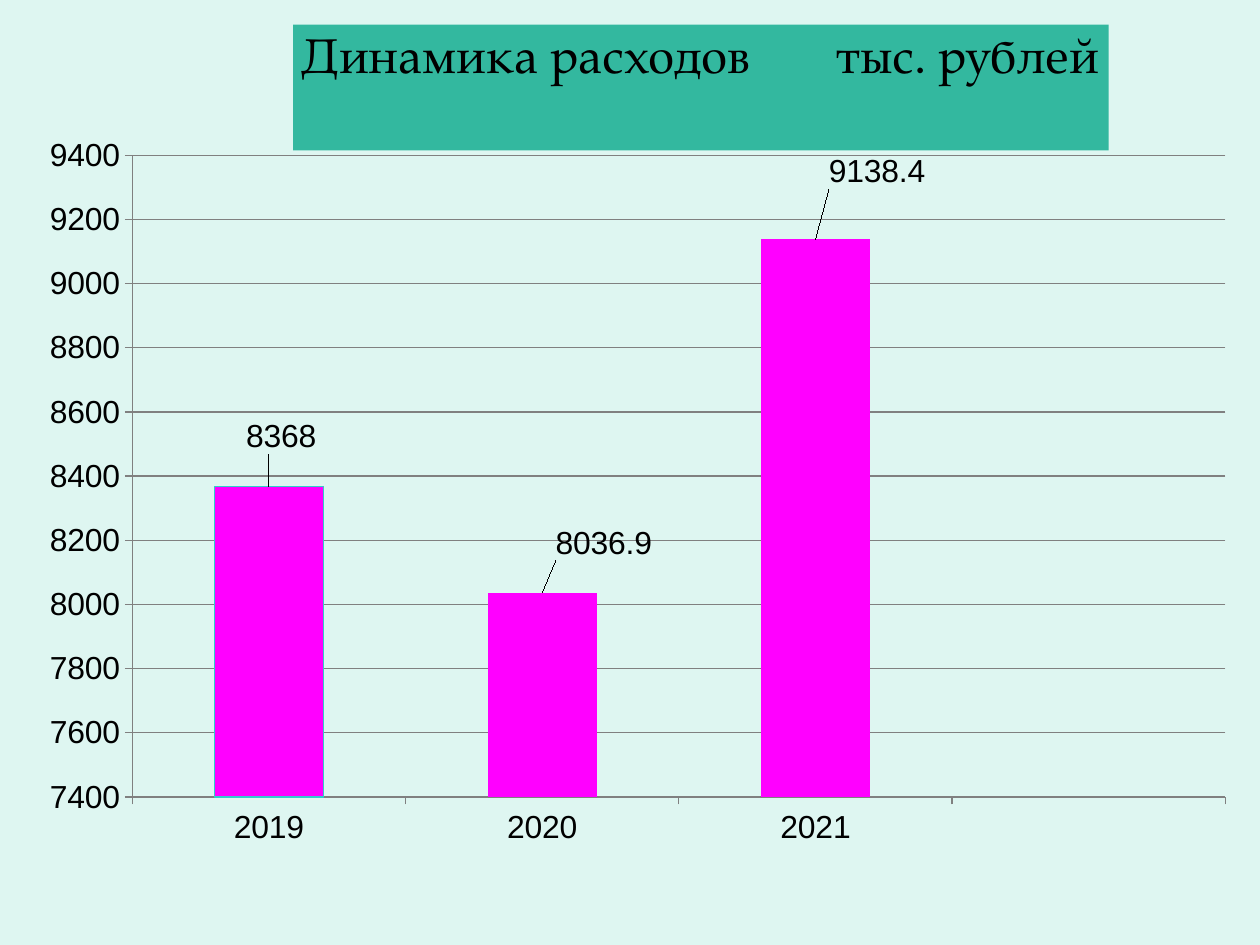
from lxml import etree
from pptx import Presentation
from pptx.chart.data import CategoryChartData
from pptx.dml.color import RGBColor
from pptx.enum import chart as charts, text
from pptx.oxml import parse_xml
from pptx.oxml.ns import nsdecls, qn
from pptx.util import Pt

BACKGROUND = RGBColor(0xDE, 0xF6, 0xF1)
TITLE_FILL = RGBColor(0x33, 0xB8, 0x9F)
BAR_FILL = RGBColor(0xFF, 0x00, 0xFF)
BAR_OUTLINE = RGBColor(0x33, 0xCC, 0xCC)
AXIS_GRAY = RGBColor(0x80, 0x80, 0x80)
BLACK = RGBColor(0, 0, 0)


def write_text(frame, content, *, font, size, color, align, tab=None):
    """Fill the first paragraph, with an optional left tab stop in points."""
    paragraph = frame.paragraphs[0]
    paragraph.alignment = align
    if tab:
        tabs = etree.SubElement(paragraph._p.get_or_add_pPr(), qn("a:tabLst"))
        etree.SubElement(tabs, qn("a:tab"), pos=str(Pt(tab)), algn="l")
    run = paragraph.add_run()
    run.text = content
    run.font.name = font
    run.font.size = Pt(size)
    run.font.color.rgb = color


presentation = Presentation()
presentation.slide_width, presentation.slide_height = Pt(720), Pt(540)
slide = presentation.slides.add_slide(presentation.slide_layouts[5])
slide.background.fill.solid()
slide.background.fill.fore_color.rgb = BACKGROUND

# Title
title = slide.shapes.title
title.left, title.top, title.width, title.height = Pt(167.5), Pt(14), Pt(466), Pt(72)
title.fill.solid()
title.fill.fore_color.rgb = TITLE_FILL
frame = title.text_frame
frame.auto_size = text.MSO_AUTO_SIZE.NONE
frame.word_wrap = True
frame.vertical_anchor = text.MSO_ANCHOR.TOP
frame.margin_left, frame.margin_right = Pt(5), Pt(0)
frame.margin_top = frame.margin_bottom = Pt(0)
write_text(frame, "Динамика расходов\tтыс. рублей", font="TeX Gyre Pagella",
           size=28, color=BLACK, align=text.PP_ALIGN.LEFT, tab=305.5)

# Expenses chart
data = CategoryChartData()
data.categories = ["2019", "2020", "2021", ""]
data.add_series("Series 1", [8368, 8036.9, 9138.4, None])
chart = slide.shapes.add_chart(charts.XL_CHART_TYPE.COLUMN_CLUSTERED,
                               Pt(16.5), Pt(2), Pt(703.5), Pt(513), data).chart
chart.has_title = False
chart.has_legend = False
chart.font.name = "Arial"
chart.font.size = Pt(18.2)
chart.font.color.rgb = BLACK
chart._chartSpace.chart.addnext(
    parse_xml(f"<c:spPr {nsdecls('c', 'a')}><a:noFill/><a:ln><a:noFill/></a:ln></c:spPr>"))

value_axis, category_axis = chart.value_axis, chart.category_axis
value_axis.minimum_scale, value_axis.maximum_scale = 7400, 9400
value_axis.major_unit = 200
value_axis.has_major_gridlines = True
for axis in (value_axis, category_axis):
    axis.major_tick_mark = charts.XL_TICK_MARK.OUTSIDE
    axis.minor_tick_mark = charts.XL_TICK_MARK.NONE
for line in (value_axis.format.line, category_axis.format.line,
             value_axis.major_gridlines.format.line):
    line.color.rgb = AXIS_GRAY
    line.width = Pt(0.75)


def add_layout(parent, position, **values):
    """Insert a manual chart layout as the child at the given position."""
    layout = etree.Element(qn("c:layout"))
    manual = etree.SubElement(layout, qn("c:manualLayout"))
    for tag, value in values.items():
        etree.SubElement(manual, qn(f"c:{tag}"), val=str(value))
    parent.insert(position, layout)


plot_area = chart._chartSpace.chart.plotArea
for layout in plot_area.findall(qn("c:layout")):
    plot_area.remove(layout)
add_layout(plot_area, 0, layoutTarget="inner", xMode="edge", yMode="edge",
           x=0.084, y=0.169, w=0.888, h=0.715)

plot = chart.plots[0]
plot.gap_width = 150
plot.vary_by_categories = False
series = plot.series[0]
series.invert_if_negative = False
series.format.fill.solid()
series.format.fill.fore_color.rgb = BAR_FILL

label_offsets = [(0.01, -0.03), (0.05, -0.03), (0.05, -0.05)]
for index, (x, y) in enumerate(label_offsets):
    point = series.points[index]
    point.format.fill.solid()
    point.format.fill.fore_color.rgb = BAR_FILL
    point.data_label.position = charts.XL_LABEL_POSITION.OUTSIDE_END
    label = series.data_labels._element.findall(qn("c:dLbl"))[index]
    add_layout(label, 1, x=x, y=y)
series.data_labels.show_value = True
first_outline = series.points[0].format.line
first_outline.color.rgb = BAR_OUTLINE
first_outline.width = Pt(0.75)

presentation.save("out.pptx")
